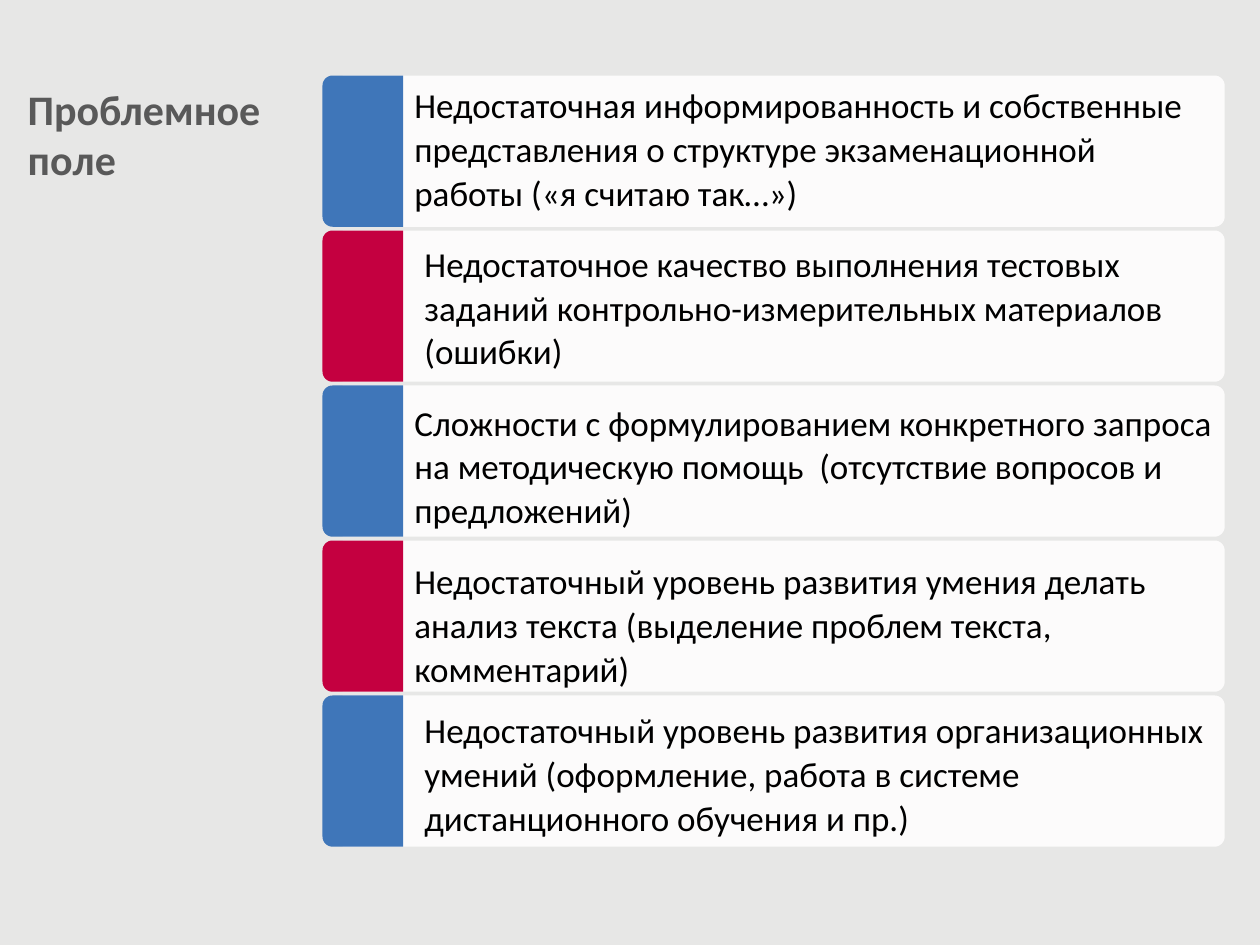
from math import cos, pi, sin

from pptx import Presentation
from pptx.dml.color import RGBColor
from pptx.enum.text import MSO_ANCHOR, MSO_AUTO_SIZE, PP_ALIGN
from pptx.util import Inches, Pt

TOP, LEFT, GROW = MSO_ANCHOR.TOP, PP_ALIGN.LEFT, MSO_AUTO_SIZE.SHAPE_TO_FIT_TEXT
COLORS = {
    "background": "E7E7E6",
    "title": "595959",
    "text": "000000",
    "card": "FCFBFB",
    "blue": "3F76B9",
    "red": "C40040",
}
CARD_TOP, CARD_HEIGHT, CARD_PITCH = 0.6, 1.2, 1.23
CORNER_RADIUS, ARC_STEPS = 0.08, 8
PROBLEMS = [
    ("Недостаточная информированность и собственные представления о структуре "
     "экзаменационной работы («я считаю так…»)", 3.19, 0.6, 6.45, 1.14),
    ("Недостаточное качество выполнения тестовых заданий "
     "контрольно-измерительных материалов (ошибки)", 3.27, 1.86, 6.61, 1.14),
    ("Сложности с формулированием конкретного запроса на методическую помощь  "
     "(отсутствие вопросов и предложений)", 3.19, 3.12, 6.61, 1.5),
    ("Недостаточный уровень развития умения делать анализ текста "
     "(выделение проблем текста, комментарий)", 3.19, 4.38, 6.45, 1.15),
    ("Недостаточный уровень развития организационных умений (оформление, "
     "работа в системе дистанционного обучения и пр.)", 3.27, 5.56, 6.45, 1.15),
]


def rgb(name):
    """Return the named colour."""
    return RGBColor.from_string(COLORS[name])


def write_text(box, text, size, color, bold=False, spacing=None):
    """Put one formatted, left-aligned paragraph into a box."""
    frame = box.text_frame
    frame.word_wrap = True
    frame.auto_size = GROW
    frame.vertical_anchor = TOP
    para = frame.paragraphs[0]
    para.alignment = LEFT
    para.line_spacing = spacing
    span = para.add_run()
    span.text = text
    span.font.name = "Calibri"
    span.font.size = Pt(size)
    span.font.bold = bold
    span.font.color.rgb = rgb(color)


def add_title(page, text, left, top, width, height):
    """Move the title placeholder into place and fill it."""
    title = page.shapes.title
    title.left, title.top = Inches(left), Inches(top)
    title.width, title.height = Inches(width), Inches(height)
    write_text(title, text, size=24, color="title", bold=True)


def add_panel(page, flat_x, round_x, top, color):
    """Draw a panel with a flat side and a side with rounded corners."""
    bottom = top + CARD_HEIGHT
    direction = 1 if round_x > flat_x else -1
    center_x = round_x - direction * CORNER_RADIUS
    angles = [step * pi / 2 / ARC_STEPS for step in range(ARC_STEPS + 1)]
    upper = [(center_x + direction * CORNER_RADIUS * sin(angle),
              top + CORNER_RADIUS * (1 - cos(angle))) for angle in angles]
    lower = [(x, top + bottom - y) for x, y in reversed(upper)]
    points = [(Inches(x), Inches(y)) for x, y in upper + lower + [(flat_x, bottom)]]
    builder = page.shapes.build_freeform(Inches(flat_x), Inches(top))
    builder.add_line_segments(points, close=True)
    panel = builder.convert_to_shape()
    panel.shadow.inherit = False
    panel.fill.solid()
    panel.fill.fore_color.rgb = rgb(color)
    panel.line.fill.background()


def add_problem(page, text, left, top, width, height):
    """Add the wording of one problem."""
    box = page.shapes.add_textbox(Inches(left), Inches(top), Inches(width), Inches(height))
    write_text(box, text, size=20, color="text", spacing=Pt(25))


def main():
    """Build the slide and save it."""
    deck = Presentation()
    deck.slide_width, deck.slide_height = Inches(10), Inches(7.5)
    page = deck.slides.add_slide(deck.slide_layouts[5])
    page.background.fill.solid()
    page.background.fill.fore_color.rgb = rgb("background")
    add_title(page, "Проблемное поле", 0.12, 0.61, 2.36, 0.91)
    for index, problem in enumerate(PROBLEMS):
        top = CARD_TOP + index * CARD_PITCH
        add_panel(page, 2.72, 9.72, top, "card")
        add_panel(page, 3.2, 2.56, top, "red" if index % 2 else "blue")
        add_problem(page, *problem)
    deck.save("out.pptx")


if __name__ == "__main__":
    main()
